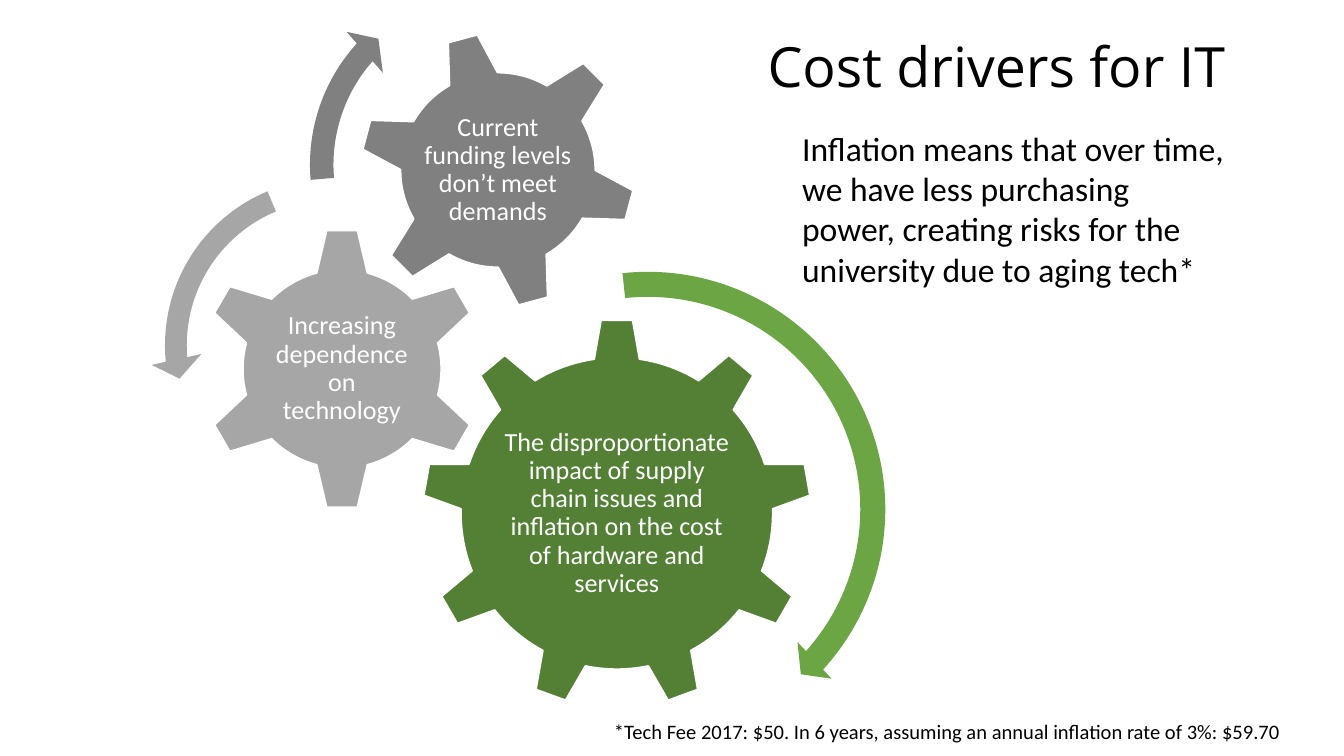
import pptx
import pptx.util
import pptx.dml.color
import pptx.enum.shapes
import pptx.enum.text

SHAPE = pptx.enum.shapes.MSO_SHAPE
ALIGN = pptx.enum.text.PP_ALIGN
ANCHOR = pptx.enum.text.MSO_ANCHOR
AUTO_SIZE = pptx.enum.text.MSO_AUTO_SIZE

# The grid: 100 columns by 56.25 rows of square cells
SLIDE_WIDTH = pptx.util.Inches(10)
SLIDE_HEIGHT = pptx.util.Inches(5.625)
COLUMN = SLIDE_WIDTH / 100
ROW = SLIDE_HEIGHT / 56.25

COLORS = {
    "white": "FFFFFF",
    "black": "000000",
    "costs": "538035",
    "costs_arrow": "6BA544",
    "dependence": "A6A6A6",
    "funding": "808080",
}


def rgb(name):
    return pptx.dml.color.RGBColor.from_string(COLORS[name])


def cells(left, top, width, height):
    """Turn columns and rows into lengths."""
    return [round(n * unit) for n, unit in
            zip((left, top, width, height), (COLUMN, ROW, COLUMN, ROW))]


def within(box, left, top, width, height):
    """Cells of a part whose place is counted from the corner of box."""
    return box[0] + left, box[1] + top, width, height


def write(shape, text, size, font="Calibri", color="black", align=ALIGN.LEFT,
          anchor=ANCHOR.TOP, spacing=None, margin=None, grow=False):
    frame = shape.text_frame
    frame.word_wrap = True
    frame.auto_size = AUTO_SIZE.SHAPE_TO_FIT_TEXT if grow else AUTO_SIZE.NONE
    frame.vertical_anchor = anchor
    if margin is not None:
        frame.margin_left = frame.margin_right = pptx.util.Inches(margin)
        frame.margin_top = frame.margin_bottom = pptx.util.Inches(margin)
    paragraph = frame.paragraphs[0]
    paragraph.alignment = align
    paragraph.line_spacing = spacing
    run = paragraph.add_run()
    run.text = text
    run.font.size = pptx.util.Pt(size)
    run.font.name = font
    run.font.color.rgb = rgb(color)


def add_filled(slide, kind, box, color):
    shape = slide.shapes.add_shape(kind, *cells(*box))
    shape.shadow.inherit = False
    shape.fill.solid()
    shape.fill.fore_color.rgb = rgb(color)
    shape.line.fill.background()
    return shape


def add_gear(slide, box, kind, color, label, inset, rotation=0):
    gear = add_filled(slide, kind, box, color)
    gear.rotation = rotation
    gear.line.color.rgb = rgb("white")
    gear.line.width = pptx.util.Pt(1)
    # The label stays upright, inset by a share of the gear on each side
    left, top, width, height = box
    across, down = inset
    label_box = (left + across * width, top + down * height,
                 (1 - 2 * across) * width, (1 - 2 * down) * height)
    write(slide.shapes.add_textbox(*cells(*label_box)), label, 14,
          color="white", align=ALIGN.CENTER, anchor=ANCHOR.MIDDLE,
          spacing=0.9, margin=0.02)


def add_turn_arrow(slide, box, kind, color, bends):
    arrow = add_filled(slide, kind, box, color)
    for index, bend in enumerate(bends):
        arrow.adjustments[index] = bend


def add_drivers(slide, box):
    # Gears, one for each cost driver
    add_gear(slide, within(box, 20.2, 23.7, 29, 29), SHAPE.GEAR_9, "costs",
             "The disproportionate impact of supply chain issues and "
             "inflation on the cost of hardware and services", (0.2, 0.24))
    add_gear(slide, within(box, 3.7, 16.9, 21.1, 21.1), SHAPE.GEAR_6,
             "dependence", "Increasing dependence on technology",
             (0.25, 0.25))
    add_gear(slide, within(box, 15.5, 2.3, 20.7, 20.7), SHAPE.GEAR_6,
             "funding", "Current funding levels don’t meet demands",
             (0.22, 0.22), rotation=345)
    # Arrows for the direction of turn
    add_turn_arrow(slide, within(box, 18.4, 19.3, 37.2, 37.2),
                   SHAPE.CIRCULAR_ARROW, "costs_arrow",
                   (0.05, 2.99, 25.3, 158.33, 0.05))
    add_turn_arrow(slide, within(box, 0, 12.2, 27, 27),
                   SHAPE.LEFT_CIRCULAR_ARROW, "dependence",
                   (0.06, 4.3, 104.89, 148.38, 0.07))
    add_turn_arrow(slide, within(box, 10.7, -2.3, 29.1, 29.1),
                   SHAPE.CIRCULAR_ARROW, "funding",
                   (0.06, 3.94, 133.14, 105.08, 0.07))


def add_title(slide, box):
    title = slide.shapes.title
    title.left, title.top, title.width, title.height = cells(*box)
    write(title, "Cost drivers for IT", 29.7, font="Open Sans",
          align=ALIGN.RIGHT, anchor=ANCHOR.MIDDLE, spacing=0.9)


def add_note(slide, box, text, size):
    write(slide.shapes.add_textbox(*cells(*box)), text, size, grow=True)


def main():
    deck = pptx.Presentation()
    deck.slide_width = SLIDE_WIDTH
    deck.slide_height = SLIDE_HEIGHT
    slide = deck.slides.add_slide(deck.slide_layouts.get_by_name("Title Only"))

    add_drivers(slide, (11.2, 0, 55.6, 56.25))
    add_title(slide, (16.7, 2.5, 75.5, 5.4))
    # Explanation and its footnote
    add_note(slide, (58.7, 9, 33.6, 13.1),
             "Inflation means that over time, we have less purchasing power, "
             "creating risks for the university due to aging tech*", 18)
    add_note(slide, (44.7, 53, 54, 2.9),
             "*Tech Fee 2017: $50. In 6 years, assuming an annual inflation "
             "rate of 3%: $59.70", 11)
    deck.save("out.pptx")


if __name__ == "__main__":
    main()
